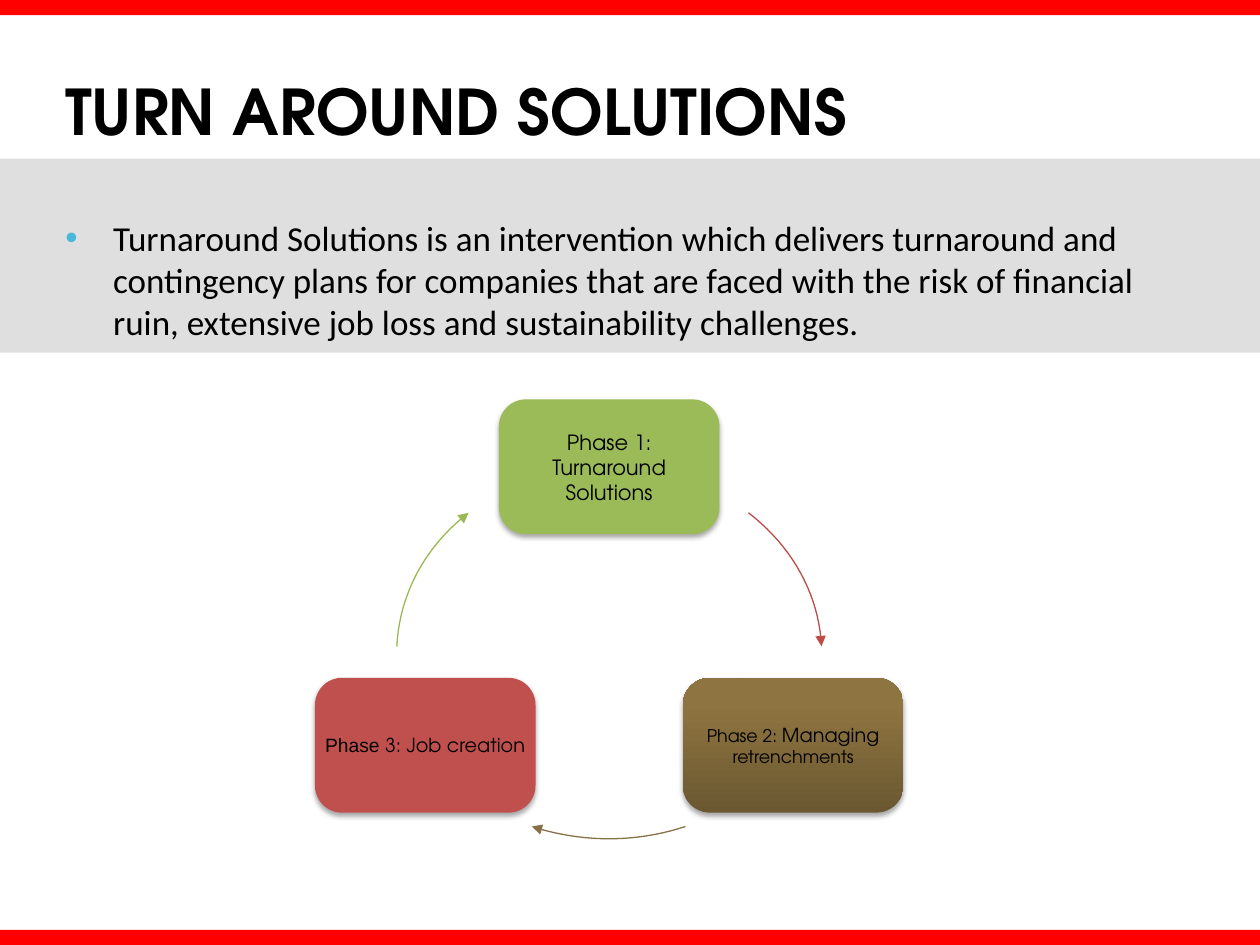
import pptx
import pptx.util
import pptx.dml.color
import pptx.enum.shapes
import pptx.enum.text
import lxml.etree
from pptx.oxml.ns import qn
from pptx.util import Inches

COLORS = {
    "black": "000000", "band": "999999", "bar": "FF0000", "bullet": "47B7DB",
    "green": "9BBB59", "red": "C0504D", "brown_dark": "6B5831", "brown": "8E7440",
    "red_arrow": "BE4B48", "brown_arrow": "877248", "green_arrow": "98B955",
}
HEADING_FONT = "TeX Gyre Adventor"
NODE_WIDTH, NODE_HEIGHT = 1.75, 1.07


def rgb(name):
    """Return the named colour."""
    return pptx.dml.color.RGBColor.from_string(COLORS[name])


def add_child(parent, tag, **attributes):
    """Append a DrawingML element to its parent."""
    return lxml.etree.SubElement(parent, qn(tag), attributes)


def add_bar(slide, box, color, alpha=None):
    """Add a plain rectangle, optionally see-through."""
    bar = slide.shapes.add_shape(
        pptx.enum.shapes.MSO_SHAPE.RECTANGLE, *map(Inches, box))
    bar.shadow.inherit = False
    bar.fill.solid()
    bar.fill.fore_color.rgb = rgb(color)
    bar.line.fill.background()
    if alpha:
        tint = bar.fill._xPr.find(".//" + qn("a:srgbClr"))
        add_child(tint, "a:alpha", val=str(alpha * 1000))


def add_text(slide, box, spans, bold=False, middle=True, inset=None):
    """Add a one-paragraph text box from (text, size, font) spans."""
    text_box = slide.shapes.add_textbox(*map(Inches, box))
    frame = text_box.text_frame
    frame.word_wrap = True
    if middle:
        frame.vertical_anchor = pptx.enum.text.MSO_ANCHOR.MIDDLE
    if inset is not None:
        frame.margin_left = frame.margin_right = Inches(inset)
        frame.margin_top = frame.margin_bottom = Inches(inset)
    para = frame.paragraphs[0]
    for text, size, font in spans:
        span = para.add_run()
        span.text = text
        span.font.size = pptx.util.Pt(size)
        span.font.name = font
        span.font.bold = bold
        span.font.color.rgb = rgb("black")
    return para


def add_intro(slide, box):
    """Add the bulleted introduction."""
    text = ("Turnaround Solutions is an intervention which delivers turnaround and "
            "contingency plans for companies that are faced with the risk of financial "
            "ruin, extensive job loss and sustainability challenges.")
    para = add_text(slide, box, [(text, 20, "Calibri")], middle=False)
    properties = para._p.get_or_add_pPr()
    properties.set("marL", str(Inches(0.38)))
    properties.set("indent", str(Inches(-0.38)))
    bullet_color = add_child(properties, "a:buClr")
    add_child(bullet_color, "a:srgbClr", val=COLORS["bullet"])
    add_child(properties, "a:buFont", typeface="Arial")
    add_child(properties, "a:buChar", char="•")


def add_node(slide, left, top, colors, spans, text_height):
    """Add a shadowed phase box with its centred label."""
    node = slide.shapes.add_shape(
        pptx.enum.shapes.MSO_SHAPE.ROUNDED_RECTANGLE,
        *map(Inches, (left, top, NODE_WIDTH, NODE_HEIGHT)))
    node.adjustments[0] = 0.2
    if len(colors) == 1:
        node.fill.solid()
        node.fill.fore_color.rgb = rgb(colors[0])
    else:
        node.fill.gradient()
        node.fill.gradient_angle = 90
        for stop, color, position in zip(node.fill.gradient_stops, colors, (0, 0.8)):
            stop.color.rgb = rgb(color)
            stop.position = position
    node.line.fill.background()
    node.shadow.inherit = False
    effects = node._element.spPr.find(qn("a:effectLst"))
    shadow = add_child(effects, "a:outerShdw", blurRad=str(pptx.util.Pt(3)),
                       dist=str(pptx.util.Pt(1.8)), dir="5400000", rotWithShape="0")
    shade = add_child(shadow, "a:srgbClr", val=COLORS["black"])
    add_child(shade, "a:alpha", val="35000")
    label_box = (left + 0.07, top + (NODE_HEIGHT - text_height) / 2,
                 NODE_WIDTH - 0.14, text_height)
    para = add_text(slide, label_box, spans, inset=0)
    para.alignment = pptx.enum.text.PP_ALIGN.CENTER


def add_arc(slide, left, top, controls, color, steps=20):
    """Add an arrow along a cubic curve given relative to its corner."""
    points = []
    for step in range(steps + 1):
        t = step / steps
        weights = ((1 - t) ** 3, 3 * t * (1 - t) ** 2, 3 * t * t * (1 - t), t ** 3)
        points.append(tuple(
            Inches(origin + sum(w * c[axis] for w, c in zip(weights, controls)))
            for axis, origin in enumerate((left, top))))
    builder = slide.shapes.build_freeform(*points[0])
    builder.add_line_segments(points[1:], close=False)
    arc = builder.convert_to_shape()
    arc.shadow.inherit = False
    arc.fill.background()
    arc.line.color.rgb = rgb(color)
    arc.line.width = pptx.util.Pt(0.75)
    add_child(arc.line._get_or_add_ln(), "a:tailEnd", type="triangle")


def add_cycle(slide, left, top):
    """Add the three phases and the arrows between them."""
    add_node(slide, left + 1.46, top, ["green"],
             [("Phase 1: Turnaround Solutions", 12, HEADING_FONT)], 0.71)
    add_arc(slide, left + 3.44, top + 0.9,
            [(0, 0), (0.35, 0.27), (0.56, 0.65), (0.58, 1.06)], "red_arrow")
    add_node(slide, left + 2.92, top + 2.21, ["brown_dark", "brown"],
             [("Phase 2: ", 10, HEADING_FONT), ("Managing", 11, HEADING_FONT),
              (" retrenchments", 10, HEADING_FONT)], 0.58)
    add_arc(slide, left + 1.72, top + 3.39,
            [(1.22, 0), (0.83, 0.13), (0.4, 0.13), (0, 0)], "brown_arrow")
    add_node(slide, left, top + 2.21, ["red"],
             [("Phase", 11, "Arial"), (" 3: Job creation", 11, HEADING_FONT)], 0.41)
    add_arc(slide, left + 0.65, top + 0.9,
            [(0, 1.06), (0.02, 0.65), (0.22, 0.27), (0.57, 0)], "green_arrow")


def main():
    """Build the slide and save the deck."""
    deck = pptx.Presentation()
    deck.slide_width, deck.slide_height = Inches(10), Inches(7.5)
    slide = deck.slides.add_slide(deck.slide_layouts[6])
    add_bar(slide, (0, 1.26, 10, 1.54), "band", alpha=31)
    add_bar(slide, (-0.03, 0, 10.03, 0.12), "bar")
    add_bar(slide, (0, 7.38, 10, 0.14), "bar")
    add_text(slide, (0.42, 0.25, 9, 1.25),
             [("TURN AROUND SOLUTIONS", 36, HEADING_FONT)], bold=True)
    add_intro(slide, (0.42, 1.67, 9.17, 5.25))
    add_cycle(slide, 2.5, 3.17)
    deck.save("out.pptx")


if __name__ == "__main__":
    main()
